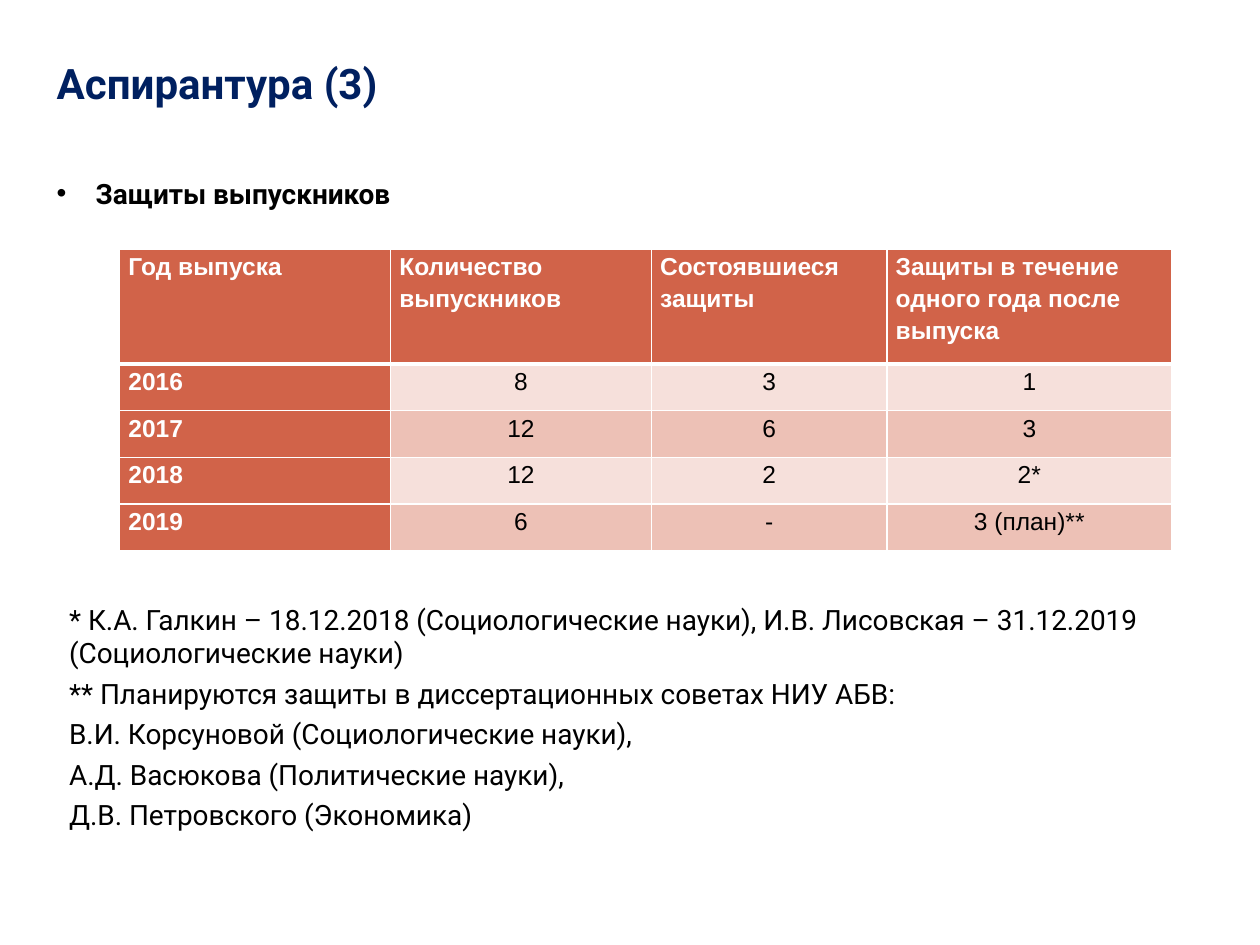
"""Build the slide on postgraduate thesis defences."""
from dataclasses import dataclass

from lxml import etree
from pptx import Presentation
from pptx.dml.color import RGBColor
from pptx.enum.text import MSO_ANCHOR, MSO_AUTO_SIZE, PP_ALIGN
from pptx.oxml.ns import qn
from pptx.util import Inches, Pt

LEFT, CENTER = PP_ALIGN.LEFT, PP_ALIGN.CENTER
TOP, MIDDLE = MSO_ANCHOR.TOP, MSO_ANCHOR.MIDDLE
NO_FIT = MSO_AUTO_SIZE.NONE


@dataclass(frozen=True)
class Theme:
    """Fonts, colours and type sizes of the slide."""

    text_font: str = "Roboto"
    table_font: str = "Arial"
    navy: str = "002060"
    black: str = "000000"
    white: str = "FFFFFF"
    accent: str = "D16349"
    bands: tuple = ("F6E0DB", "EDC1B6")
    title_size: int = 24
    body_size: int = 16
    table_size: int = 14


THEME = Theme()
MARGIN = 0.35
BODY_WIDTH = 9.31
COLUMN_WIDTHS = (2.15, 2.07, 1.87, 2.26)
HEADER_HEIGHT, ROW_HEIGHT = 0.91, 0.37
TABLE_ROWS = (
    ("Год выпуска", "Количество выпускников", "Состоявшиеся защиты",
     "Защиты в течение одного года после выпуска"),
    ("2016", "8", "3", "1"),
    ("2017", "12", "6", "3"),
    ("2018", "12", "2", "2*"),
    ("2019", "6", "-", "3 (план)**"),
)
FOOTNOTES = (
    "* К.А. Галкин – 18.12.2018 (Социологические науки), "
    "И.В. Лисовская – 31.12.2019 (Социологические науки)",
    "** Планируются защиты в диссертационных советах НИУ АБВ:",
    "В.И. Корсуновой (Социологические науки),",
    "А.Д. Васюкова (Политические науки),",
    "Д.В. Петровского (Экономика)",
)


def write(para, text, font=THEME.text_font, size=THEME.body_size, color=THEME.black,
          bold=False, align=LEFT, before=0, spacing=1, margin=0, indent=0):
    """Put formatted text into a paragraph."""
    para.alignment = align
    para.space_before = Pt(before)
    para.line_spacing = spacing
    properties = para._p.get_or_add_pPr()
    properties.set("marL", str(Inches(margin)))
    properties.set("indent", str(Inches(indent)))
    span = para.add_run()
    span.text = text
    span.font.name = font
    span.font.size = Pt(size)
    span.font.bold = bold
    span.font.color.rgb = RGBColor.from_string(color)


def prepare(box, left, top, width, height, anchor=TOP):
    """Place a text shape and return its text frame."""
    box.left, box.top = Inches(left), Inches(top)
    box.width, box.height = Inches(width), Inches(height)
    frame = box.text_frame
    frame.word_wrap = True
    frame.auto_size = NO_FIT
    frame.vertical_anchor = anchor
    return frame


def add_footnotes(page):
    """Add the notes below the table."""
    box = page.shapes.add_textbox(0, 0, 0, 0)
    frame = prepare(box, MARGIN, 4.73, BODY_WIDTH, 2.17)
    for number, note in enumerate(FOOTNOTES):
        para = frame.add_paragraph() if number else frame.paragraphs[0]
        write(para, note, before=4, margin=0.1)


def set_borders(cell, **widths):
    """Draw white cell borders, one point wide unless a side says otherwise."""
    properties = cell._tc.get_or_add_tcPr()
    for side in "LRTB":
        line = etree.SubElement(properties, qn(f"a:ln{side}"), w=str(Pt(widths.get(side, 1))))
        fill = etree.SubElement(line, qn("a:solidFill"))
        etree.SubElement(fill, qn("a:srgbClr"), val=THEME.white)


def format_cell(cell, text, row, column):
    """Fill one table cell according to its place."""
    heading = row == 0 or column == 0
    cell.margin_left = cell.margin_right = Inches(0.07)
    cell.margin_top = cell.margin_bottom = 0
    set_borders(cell, T=3 if row == 1 else 1, B=3 if row == 0 else 1)
    cell.fill.solid()
    color = THEME.accent if heading else THEME.bands[(row - 1) % 2]
    cell.fill.fore_color.rgb = RGBColor.from_string(color)
    write(cell.text_frame.paragraphs[0], text, font=THEME.table_font,
          size=THEME.table_size, color=THEME.white if heading else THEME.black,
          bold=heading, align=LEFT if heading else CENTER, spacing=1.15)


def add_defence_table(page):
    """Add the table of graduates and defences by year."""
    heights = [HEADER_HEIGHT] + [ROW_HEIGHT] * (len(TABLE_ROWS) - 1)
    table = page.shapes.add_table(
        len(TABLE_ROWS), len(COLUMN_WIDTHS), Inches(0.95), Inches(1.98),
        Inches(sum(COLUMN_WIDTHS)), Inches(sum(heights))).table
    for column, width in zip(table.columns, COLUMN_WIDTHS):
        column.width = Inches(width)
    for row, (height, texts) in enumerate(zip(heights, TABLE_ROWS)):
        table.rows[row].height = Inches(height)
        for column, text in enumerate(texts):
            format_cell(table.cell(row, column), text, row, column)


def main():
    """Assemble and save the deck."""
    deck = Presentation()
    deck.slide_width, deck.slide_height = Inches(10), Inches(7.5)
    page = deck.slides.add_slide(deck.slide_layouts[1])
    title = prepare(page.shapes.title, MARGIN, 0.4, 8.96, 0.52, anchor=MIDDLE)
    write(title.paragraphs[0], "Аспирантура (3)", size=THEME.title_size,
          color=THEME.navy, bold=True)
    body = prepare(page.placeholders[1], MARGIN, 1.35, BODY_WIDTH, 0.57)
    write(body.paragraphs[0], "Защиты выпускников", bold=True, before=4,
          margin=0.31, indent=-0.31)
    add_footnotes(page)
    add_defence_table(page)
    deck.save("out.pptx")


if __name__ == "__main__":
    main()
